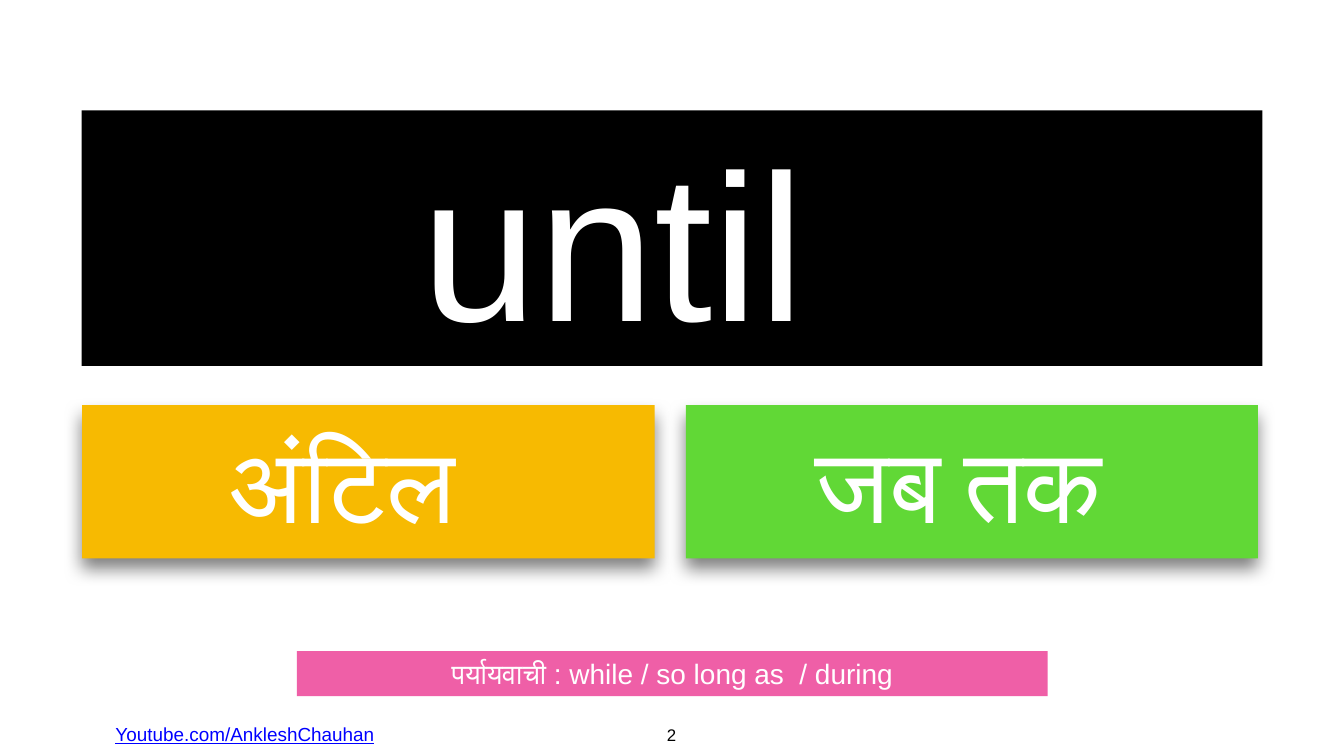
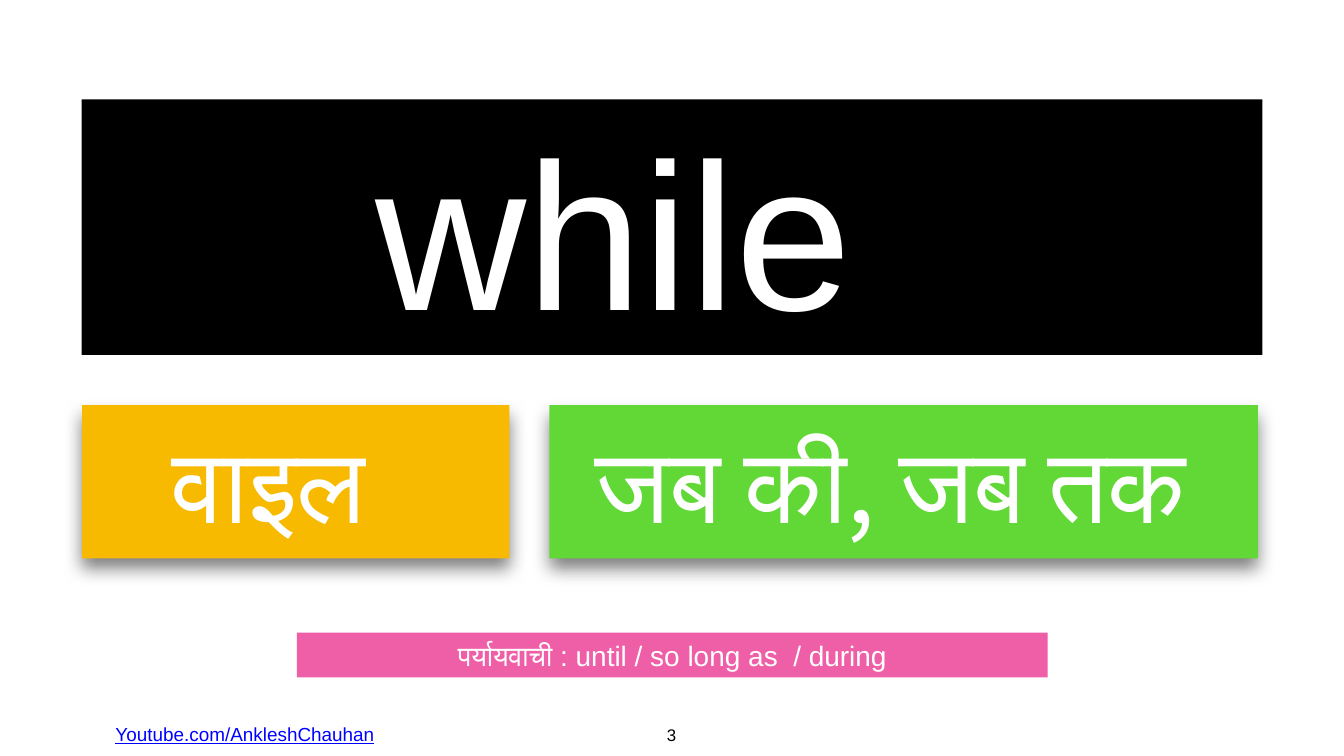
from lxml.etree import SubElement
from pptx import Presentation
from pptx.dml.color import RGBColor
from pptx.enum.shapes import MSO_SHAPE
from pptx.enum.text import MSO_ANCHOR, MSO_AUTO_SIZE, PP_ALIGN
from pptx.oxml.ns import qn
from pptx.util import Inches, Pt

WORDS = [
    {"number": 2, "word": "until", "sound": "अंटिल", "meaning": "जब तक",
     "synonyms": "पर्यायवाची : while / so long as  / during",
     "word_top": 2.19, "synonyms_top": 12.92, "sound_width": 11.36, "meaning_left": 13.61},
    {"number": 3, "word": "while", "sound": "वाइल", "meaning": "जब की, जब तक",
     "synonyms": "पर्यायवाची : until / so long as  / during",
     "word_top": 1.97, "synonyms_top": 12.55, "sound_width": 8.48, "meaning_left": 10.9},
]
FOOTER = "Youtube.com/AnkleshChauhan"

COLORS = {"black": "000000", "white": "FFFFFF", "sound": "F7BA01",
          "meaning": "61D836", "synonyms": "EF5FA7", "link": "0000FF"}
SLIDE_WIDTH, SLIDE_HEIGHT = 26.67, 15
LEFT, RIGHT = 1.63, 24.96
CARD_TOP, CARD_HEIGHT = 8.04, 3.04
INSET = 0.06


def color(name):
    return RGBColor.from_string(COLORS[name])


def write(shape, text, size, font_name="Arial", text_color="white", shift=0,
          anchor=MSO_ANCHOR.MIDDLE, wrap=True):
    """Write one centred paragraph; shift widens the right inset."""
    frame = shape.text_frame
    frame.margin_left = frame.margin_top = frame.margin_bottom = Inches(INSET)
    frame.margin_right = Inches(INSET + shift)
    frame.auto_size = MSO_AUTO_SIZE.NONE
    frame.vertical_anchor = anchor
    frame.word_wrap = wrap
    paragraph = frame.paragraphs[0]
    paragraph.text = text
    paragraph.alignment = PP_ALIGN.CENTER
    font = paragraph.font
    font.name, font.size = font_name, Pt(size)
    font.color.rgb = color(text_color)
    properties = paragraph._p.pPr.find(qn("a:defRPr"))
    SubElement(properties, qn("a:cs"), typeface=font_name)
    return paragraph


def place(shape, left, top, width, height):
    shape.left, shape.top = Inches(left), Inches(top)
    shape.width, shape.height = Inches(width), Inches(height)


def paint(shape, fill):
    shape.fill.solid()
    shape.fill.fore_color.rgb = color(fill)
    shape.line.fill.background()


def add_band(slide, box, fill):
    band = slide.shapes.add_shape(MSO_SHAPE.RECTANGLE, *map(Inches, box))
    paint(band, fill)
    band.shadow.inherit = False
    return band


def add_card(slide, left, width, fill, text, font_name, shift):
    card = add_band(slide, (left, CARD_TOP, width, CARD_HEIGHT), fill)
    write(card, text, 150, font_name, shift=shift)
    effects = card.element.spPr.find(qn("a:effectLst"))
    shadow = SubElement(effects, qn("a:outerShdw"), blurRad=str(Pt(26)),
                        dist=str(Pt(14.5)), dir="5400000", rotWithShape="0")
    shade = SubElement(shadow, qn("a:srgbClr"), val=COLORS["black"])
    SubElement(shade, qn("a:alpha"), val="50000")


def add_footer(slide, number):
    address = slide.shapes.add_textbox(*map(Inches, (2.21, 14.28, 5.3, 0.56)))
    write(address, FOOTER, 27, text_color="link", wrap=False).font.underline = True
    page = slide.shapes.add_textbox(*map(Inches, (13.17, 14.31, 0.31, 0.5)))
    write(page, str(number), 24, text_color="black", anchor=MSO_ANCHOR.TOP, wrap=False)


def add_word_slide(presentation, entry):
    slide = presentation.slides.add_slide(presentation.slide_layouts[5])
    title = slide.shapes.title
    place(title, 1.62, entry["word_top"], 23.43, 5.07)
    paint(title, "black")
    write(title, entry["word"], 299, shift=2.31)

    add_card(slide, LEFT, entry["sound_width"], "sound", entry["sound"],
             "Arial Narrow", 1.05)
    meaning_left = entry["meaning_left"]
    add_card(slide, meaning_left, RIGHT - meaning_left, "meaning", entry["meaning"],
             "Noto Sans CJK SC", 0.5)

    synonyms = add_band(slide, (5.89, entry["synonyms_top"], 14.9, 0.89), "synonyms")
    write(synonyms, entry["synonyms"], 40)
    add_footer(slide, entry["number"])


def main():
    presentation = Presentation()
    presentation.slide_width = Inches(SLIDE_WIDTH)
    presentation.slide_height = Inches(SLIDE_HEIGHT)
    for entry in WORDS:
        add_word_slide(presentation, entry)
    presentation.save("out.pptx")


if __name__ == "__main__":
    main()
